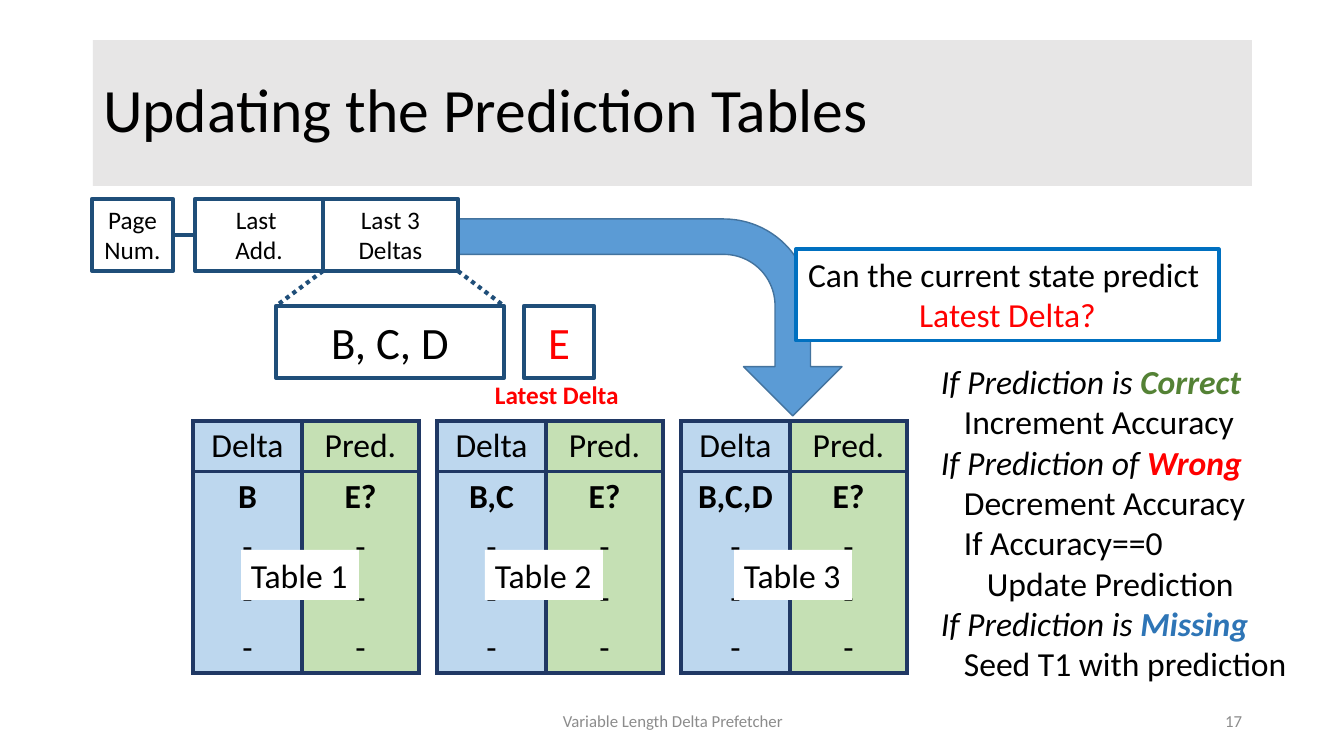
import lxml.etree
import pptx
import pptx.dml.color
import pptx.enum.dml
import pptx.enum.shapes
import pptx.enum.text
import pptx.oxml.ns
import pptx.util

SCALE = 914400 / 100.8
FONT = "Calibri"
BLACK, WHITE, RED, GRAY = "000000", "FFFFFF", "FF0000", "8C8C8C"
NAVY, TABLE_EDGE = "1F4E79", "203864"
DELTA_FILL, PRED_FILL = "BDD7EE", "C5E0B4"
LEFT, CENTER, RIGHT = (getattr(pptx.enum.text.PP_ALIGN, side) for side in ("LEFT", "CENTER", "RIGHT"))
TOP, MIDDLE = pptx.enum.text.MSO_ANCHOR.TOP, pptx.enum.text.MSO_ANCHOR.MIDDLE
SHAPES = pptx.enum.shapes.MSO_SHAPE


def px(*lengths):
    """Turn pixel lengths into a list of EMU."""
    return [pptx.util.Emu(round(length * SCALE)) for length in lengths]


def paint(color_format, color):
    """Set a colour format or a fill to a hex colour."""
    if hasattr(color_format, "solid"):
        color_format.solid()
        color_format = color_format.fore_color
    color_format.rgb = pptx.dml.color.RGBColor.from_string(color)


def write(frame, paragraphs, size=24, color=BLACK, align=LEFT, anchor=TOP,
          bold=False, italic=False, wrap=True, indents=(), spacing=None):
    """Fill a text frame; a paragraph is a string or a list of (text, overrides)."""
    frame.word_wrap = wrap
    frame.vertical_anchor = anchor
    for index, runs in enumerate(paragraphs):
        paragraph = frame.paragraphs[0] if index == 0 else frame.add_paragraph()
        paragraph.alignment = align
        if spacing:
            paragraph.line_spacing = spacing
        if indents and indents[index]:
            paragraph._p.get_or_add_pPr().set("marL", str(px(indents[index])[0]))
        for text, overrides in [(runs, {})] if isinstance(runs, str) else runs:
            run = paragraph.add_run()
            run.text = text
            run.font.name = FONT
            run.font.size = pptx.util.Pt(size)
            run.font.bold = overrides.get("bold", bold)
            run.font.italic = overrides.get("italic", italic)
            paint(run.font.color, overrides.get("color", color))


def add_block(slide, box, fill=None, line=None, width=3, kind=SHAPES.RECTANGLE):
    """Add a flat preset shape and return it."""
    block = slide.shapes.add_shape(kind, *px(*box))
    block.shadow.inherit = False
    if fill:
        paint(block.fill, fill)
    else:
        block.fill.background()
    if line:
        paint(block.line.fill, line)
        block.line.width = pptx.util.Pt(width)
    else:
        block.line.fill.background()
    return block


def add_label(slide, box, paragraphs, **text_format):
    """Add a plain text box."""
    write(slide.shapes.add_textbox(*px(*box)).text_frame, paragraphs, **text_format)


def add_link(slide, start, end, dotted=False):
    """Join two points with a navy line."""
    link = slide.shapes.add_connector(pptx.enum.shapes.MSO_CONNECTOR.STRAIGHT, *px(*start, *end))
    paint(link.line.fill, NAVY)
    link.line.width = pptx.util.Pt(3)
    if dotted:
        link.line.dash_style = pptx.enum.dml.MSO_LINE.ROUND_DOT
    lxml.etree.SubElement(link._element.spPr, pptx.oxml.ns.qn("a:effectLst"))


def add_flow_arrow(slide, box):
    """Draw the bent arrow that leads from the deltas to the last table."""
    left, top, width, height = box
    unturned = (left + (width - height) / 2, top + (height - width) / 2, height, width)
    arrow = add_block(slide, unturned, "5B9BD5", "43739E", 1, SHAPES.BENT_ARROW)
    arrow.rotation = 90
    for index, value in enumerate((0.18, 0.25, 0.25, 0.44)):
        arrow.adjustments[index] = value


def add_title(slide, box):
    """Place and format the title band."""
    title = slide.shapes.title
    title.left, title.top, title.width, title.height = px(*box)
    paint(title.fill, "E7E6E6")
    write(title.text_frame, ["Updating the Prediction Tables"], size=44, anchor=MIDDLE, spacing=0.9)


def add_footer(slide, box):
    """Place the centred footer and the right-aligned page number."""
    left, top, width, height = box
    style = dict(size=12, color=GRAY, anchor=MIDDLE)
    add_label(slide, (left + 353, top, 454, height), ["Variable Length Delta Prefetcher"], align=CENTER, **style)
    add_label(slide, (left + width - 302, top, 302, height), ["17"], align=RIGHT, **style)


def add_history(slide, box):
    """Draw the page entry and its expanded delta history."""
    left, top, width, height = box
    entries = [(0, 81, ["Page Num."]), (103, 128, ["Last ", "Add."]), (231, 135, ["Last 3 Deltas"])]
    for offset, entry_width, words in entries:
        entry = add_block(slide, (left + offset, top, entry_width, height), WHITE, NAVY)
        write(entry.text_frame, words, size=18, align=CENTER)
    middle, bottom, detail_top = top + height // 2, top + height, top + 107
    add_link(slide, (left + 81, middle), (left + 103, middle))
    details = [(184, 228, "B, C, D", BLACK), (432, 70, "E", RED)]
    for offset, detail_width, letters, color in details:
        detail = add_block(slide, (left + offset, detail_top, detail_width, height), line=NAVY)
        write(detail.text_frame, [letters], size=32, color=color, align=CENTER, anchor=MIDDLE)
    for entry_edge, detail_edge in ((231, 184), (366, 412)):
        add_link(slide, (left + entry_edge, bottom), (left + detail_edge, detail_top), dotted=True)
    add_label(slide, (left + 393, top + 175, 145, 40), ["Latest Delta"],
              size=18, color=RED, bold=True, wrap=False)


def set_borders(cell, visible):
    """Draw the named cell sides and hide the others."""
    properties = cell._tc.get_or_add_tcPr()
    for side in "LRTB":
        edge = lxml.etree.SubElement(properties, pptx.oxml.ns.qn(f"a:ln{side}"), w=str(pptx.util.Pt(3)))
        if side in visible:
            solid = lxml.etree.SubElement(edge, pptx.oxml.ns.qn("a:solidFill"))
            lxml.etree.SubElement(solid, pptx.oxml.ns.qn("a:srgbClr"), val=TABLE_EDGE)
        else:
            lxml.etree.SubElement(edge, pptx.oxml.ns.qn("a:noFill"))


def add_prediction_table(slide, box, name, deltas, name_offset):
    """Draw one delta-to-prediction table with its name laid over it."""
    left, top, width, height = box
    rows = [("Delta", "Pred."), (deltas, "E?")] + [("-", "-")] * 3
    grid = slide.shapes.add_table(len(rows), 2, *px(*box)).table
    grid.first_row = grid.horz_banding = False
    grid.columns[0].width, grid.columns[1].width = px(109, width - 109)
    sides = ["LRTB", "LRT", "LR", "LR", "LRB"]
    for row_index, row in enumerate(rows):
        grid.rows[row_index].height = px(height / len(rows))[0]
        for column, (text, fill) in enumerate(zip(row, (DELTA_FILL, PRED_FILL))):
            cell = grid.cell(row_index, column)
            set_borders(cell, sides[row_index])
            paint(cell.fill, fill)
            write(cell.text_frame, [text], align=CENTER, bold=row_index == 1)
    plate = add_block(slide, (left + name_offset, top + 129, 118, 50), WHITE)
    write(plate.text_frame, [name], wrap=False)


def add_question(slide, box):
    """Draw the framed question."""
    question = add_block(slide, box, WHITE, "0070C0", 2.25)
    write(question.text_frame, ["Can the current state predict ", [("Latest Delta?", {"color": RED})]],
          align=CENTER, wrap=False)


def add_rules(slide, box):
    """List the update rule for each prediction outcome."""
    cases = [
        ("If Prediction is ", "Correct", "548235", [("Increment Accuracy", 1)]),
        ("If Prediction of ", "Wrong", RED,
         [("Decrement Accuracy", 1), ("If Accuracy==0", 1), ("Update Prediction", 2)]),
        ("If Prediction is ", "Missing", "2E75B6", [("Seed T1 with prediction", 1)]),
    ]
    lines, indents = [], []
    for condition, outcome, color, actions in cases:
        lines.append([(condition, {"italic": True}), (outcome, {"italic": True, "bold": True, "color": color})])
        indents.append(0)
        for action, level in actions:
            lines.append(action)
            indents.append(23 * level)
    add_label(slide, box, lines, indents=indents)


def main():
    """Build and save the slide."""
    deck = pptx.Presentation()
    deck.slide_width, deck.slide_height = px(1344, 756)
    slide = deck.slides.add_slide(deck.slide_layouts[5])
    add_flow_arrow(slide, (458, 219, 384, 197))
    add_title(slide, (93, 40, 1159, 146))
    add_footer(slide, (93, 701, 1159, 40))
    add_history(slide, (92, 199, 502, 72))
    tables = [("Table 1", "B", 48), ("Table 2", "B,C", 48), ("Table 3", "B,C,D", 53)]
    for index, (name, deltas, name_offset) in enumerate(tables):
        add_prediction_table(slide, (193 + 244 * index, 421, 226, 250), name, deltas, name_offset)
    add_rules(slide, (931, 356, 384, 336))
    add_question(slide, (796, 249, 423, 92))
    deck.save("out.pptx")


if __name__ == "__main__":
    main()
